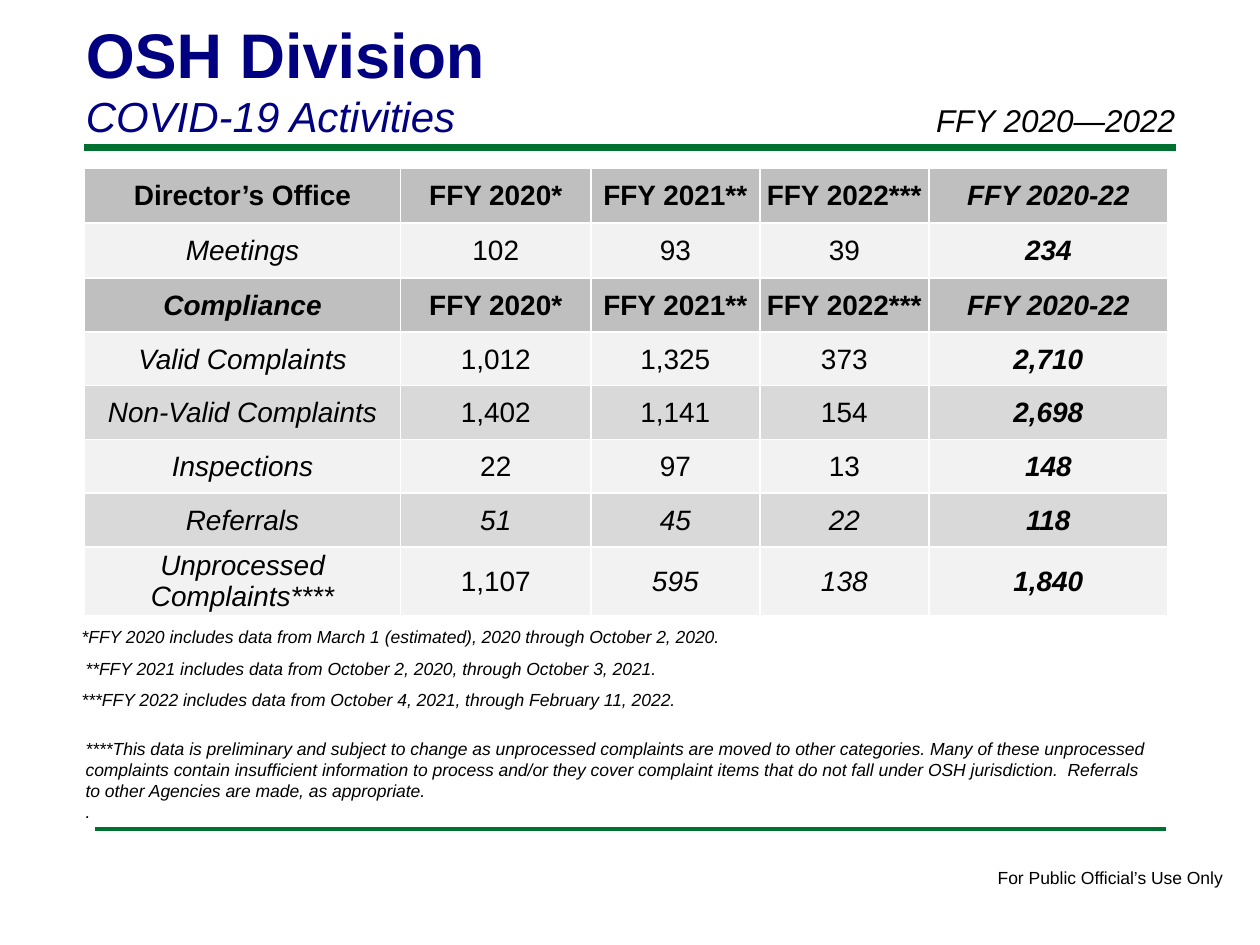
from lxml import etree
from pptx import Presentation
from pptx import util as u
from pptx.dml.color import RGBColor
from pptx.enum import shapes, text
from pptx.oxml import ns

Pt = u.Pt
COLORS = {"navy": "000080", "green": "007030", "black": "000000", "white": "FFFFFF",
          "header": "BFBFBF", "light": "F2F2F2", "dark": "D9D9D9"}
PERIODS = ["FFY 2020*", "FFY 2021**", "FFY 2022***", "FFY 2020-22"]
ROWS = [
    ("header", "Director’s Office", PERIODS),
    ("light", "Meetings", ["102", "93", "39", "234"]),
    ("header", "Compliance", PERIODS),
    ("light", "Valid Complaints", ["1,012", "1,325", "373", "2,710"]),
    ("dark", "Non-Valid Complaints", ["1,402", "1,141", "154", "2,698"]),
    ("light", "Inspections", ["22", "97", "13", "148"]),
    ("dark", "Referrals", ["51", "45", "22", "118"]),
    ("light", "Unprocessed Complaints****", ["1,107", "595", "138", "1,840"]),
]
ITALIC_VALUES = {"51", "45", "595", "138"}
ITALIC_CELLS = {(6, 3)}
COLUMN_WIDTHS = [180.8, 108.6, 96.6, 96.6, 136.6]
ROW_HEIGHTS = [31.5, 31.5] + [30.7] * 6
PERIOD_NOTES = [
    (39.6, "*FFY 2020 includes data from March 1 (estimated), 2020 through October 2, 2020."),
    (41.8, "**FFY 2021 includes data from October 2, 2020, through October 3, 2021."),
    (39.6, "***FFY 2022 includes data from October 4, 2021, through February 11, 2022."),
]
PRELIMINARY_NOTE = (
    "****This data is preliminary and subject to change as unprocessed complaints are moved "
    "to other categories. Many of these unprocessed complaints contain insufficient "
    "information to process and/or they cover complaint items that do not fall under OSH "
    "jurisdiction.  Referrals to other Agencies are made, as appropriate.")


def color(name):
    return RGBColor.from_string(COLORS[name])


def write(para, words, size=10, ink="black", bold=False, italic=False,
          align=text.PP_ALIGN.LEFT):
    para.alignment = align
    span = para.add_run()
    span.text = words
    font = span.font
    font.name, font.size, font.bold, font.italic = "Arial", Pt(size), bold, italic
    font.color.rgb = color(ink)


def add_label(page, left, top, width, height, lines, wrap=True, **style):
    box = page.shapes.add_textbox(Pt(left), Pt(top), Pt(width), Pt(height))
    frame = box.text_frame
    frame.word_wrap = wrap
    for index, words in enumerate(lines):
        para = frame.add_paragraph() if index else frame.paragraphs[0]
        write(para, words, **style)


def add_rule(page, left, top, width, weight):
    rule = page.shapes.add_connector(
        shapes.MSO_CONNECTOR.STRAIGHT, Pt(left), Pt(top), Pt(left + width), Pt(top))
    rule.line.color.rgb = color("green")
    rule.line.width = Pt(weight)
    etree.SubElement(rule._element.spPr, ns.qn("a:effectLst"))


def add_heading(page, left, top, width, height):
    title = page.shapes.title
    title.left, title.top, title.width, title.height = map(Pt, (left, top, width, height))
    frame = title.text_frame
    frame.auto_size = text.MSO_AUTO_SIZE.NONE
    frame.vertical_anchor = text.MSO_ANCHOR.BOTTOM
    write(frame.paragraphs[0], "OSH Division", size=36, ink="navy", bold=True)
    write(frame.add_paragraph(), "COVID-19 Activities", size=24, ink="navy", italic=True)
    add_label(page, left + 486, top + 49.7, 180, 29, ["FFY 2020—2022"], size=18, italic=True)
    add_rule(page, left + 6.2, top + 79.9, 624, 4)


def add_borders(cell):
    properties = cell._tc.get_or_add_tcPr()
    for side in ("lnL", "lnR", "lnT", "lnB"):
        line = etree.SubElement(properties, ns.qn(f"a:{side}"), w=str(Pt(1)))
        fill = etree.SubElement(line, ns.qn("a:solidFill"))
        etree.SubElement(fill, ns.qn("a:srgbClr"), val=COLORS["white"])


def fill_cell(cell, words, shade, bold, italic):
    add_borders(cell)
    cell.fill.solid()
    cell.fill.fore_color.rgb = color(shade)
    cell.margin_left = cell.margin_right = cell.margin_top = Pt(0.7)
    cell.margin_bottom = Pt(0)
    cell.vertical_anchor = text.MSO_ANCHOR.MIDDLE
    write(cell.text_frame.paragraphs[0], words, size=16, bold=bold, italic=italic,
          align=text.PP_ALIGN.CENTER)


def add_activity_table(page, left, top):
    table = page.shapes.add_table(
        len(ROWS), len(COLUMN_WIDTHS), Pt(left), Pt(top),
        Pt(sum(COLUMN_WIDTHS)), Pt(sum(ROW_HEIGHTS))).table
    table.first_row = table.horz_banding = False
    for column, width in zip(table.columns, COLUMN_WIDTHS):
        column.width = Pt(width)
    total = len(COLUMN_WIDTHS) - 1
    for r, (shade, label, values) in enumerate(ROWS):
        table.rows[r].height = Pt(ROW_HEIGHTS[r])
        for c, words in enumerate([label, *values]):
            bold = shade == "header" or c == total
            italic = (c == total or (c == 0 and r > 0)
                      or words in ITALIC_VALUES or (r, c) in ITALIC_CELLS)
            fill_cell(table.cell(r, c), words, shade, bold, italic)


def add_notes(page, top):
    for index, (left, words) in enumerate(PERIOD_NOTES):
        add_label(page, left, top + 18 * index, 628.6, 19.4, [words], italic=True)
    add_label(page, 41.8, top + 64, 624, 55.4, [PRELIMINARY_NOTE, "."], italic=True)


def add_footer(page, left, top, width):
    add_rule(page, left, top, width, 2)
    add_label(page, left + 509, top + 18, 144.7, 19.4,
              ["For Public Official’s Use Only"], wrap=False)


def main():
    deck = Presentation()
    deck.slide_width, deck.slide_height = Pt(720), Pt(540)
    page = deck.slides.add_slide(deck.slide_layouts[5])
    add_heading(page, 41.8, 4.3, 594, 79.9)
    add_activity_table(page, 48.2, 96)
    add_notes(page, 354.3)
    add_footer(page, 54, 473.8, 612)
    deck.save("out.pptx")


if __name__ == "__main__":
    main()
